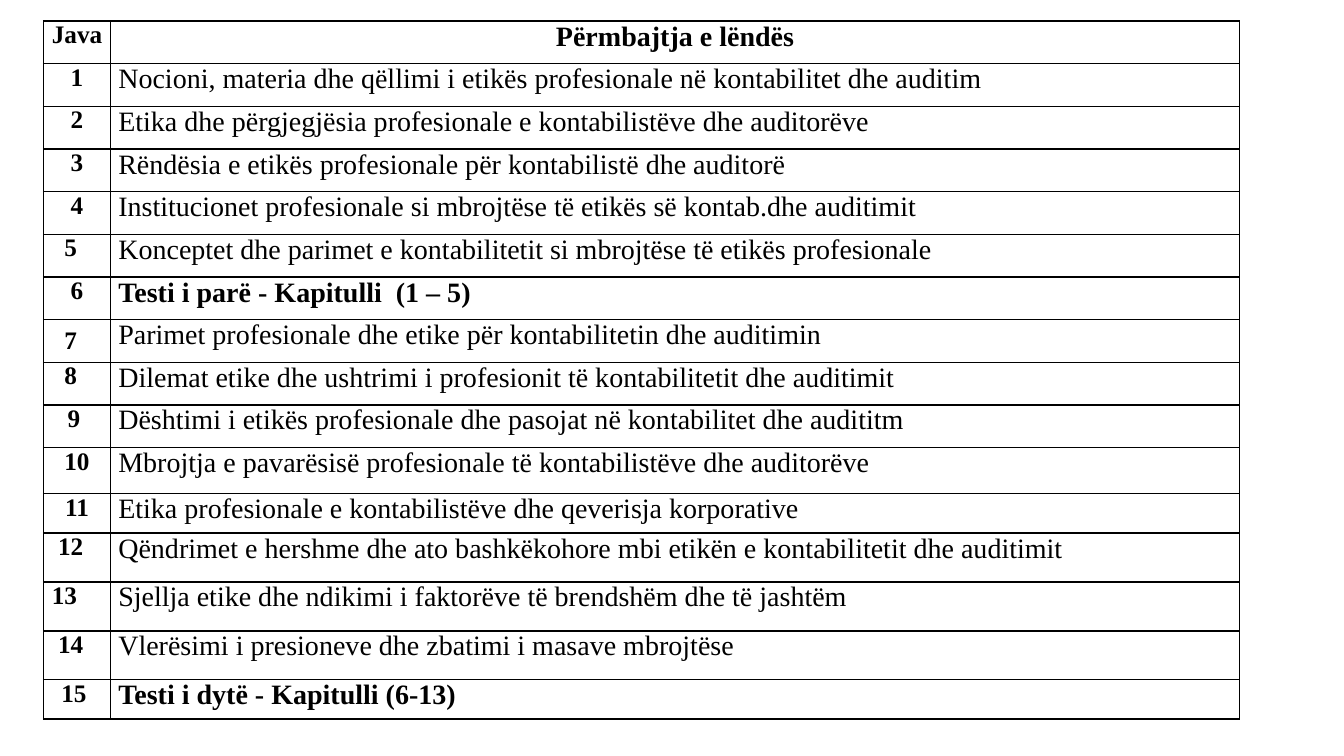
from pptx import Presentation
from pptx.dml.color import RGBColor
from pptx.enum.text import MSO_ANCHOR as Anchor, PP_ALIGN as Align
from pptx.oxml import parse_xml
from pptx.oxml.ns import nsdecls
from pptx.util import Pt

PX = 6350
FONT = "Times New Roman"
INK = "000000"
INSET = 11
SHIFT = 9
HEAD = ("Java", "Përmbajtja e lëndës")
TOPICS = [
    "Nocioni, materia dhe qëllimi i etikës profesionale në kontabilitet dhe auditim",
    "Etika dhe përgjegjësia profesionale e kontabilistëve dhe auditorëve",
    "Rëndësia e etikës profesionale për kontabilistë dhe auditorë",
    "Institucionet profesionale si mbrojtëse të etikës së kontab.dhe auditimit",
    "Konceptet dhe parimet e kontabilitetit si mbrojtëse të etikës profesionale",
    "Testi i parë - Kapitulli  (1 – 5)",
    "Parimet profesionale dhe etike për kontabilitetin dhe auditimin",
    "Dilemat etike dhe ushtrimi i profesionit të kontabilitetit dhe auditimit",
    "Dështimi i etikës profesionale dhe pasojat në kontabilitet dhe audititm",
    "Mbrojtja e pavarësisë profesionale të kontabilistëve dhe auditorëve",
    "Etika profesionale e kontabilistëve dhe qeverisja korporative",
    "Qëndrimet e hershme dhe ato bashkëkohore mbi etikën e kontabilitetit dhe auditimit",
    "Sjellja etike dhe ndikimi i faktorëve të brendshëm dhe të jashtëm",
    "Vlerësimi i presioneve dhe zbatimi i masave mbrojtëse",
    "Testi i dytë - Kapitulli (6-13)",
]
TESTS = {6, 15}
SHIFTS = {5: 2, 7: 2, 8: 2, 9: 1, 12: 2, 13: 4, 14: 2, 15: 1}
ROWS = [61] * 10 + [66, 56, 70, 70, 70, 56]


def px(n):
    return n * PX


def color(code):
    return RGBColor.from_string(code)


def border(cell):
    props = cell._tc.get_or_add_tcPr()
    for i, side in enumerate(("lnL", "lnR", "lnT", "lnB")):
        props.insert(i, parse_xml(
            f'<a:{side} {nsdecls("a")} w="{Pt(1)}"><a:solidFill>'
            f'<a:srgbClr val="{INK}"/></a:solidFill></a:{side}>'))


def write(cell, text, size, bold, align, shift=0):
    cell.fill.background()
    border(cell)
    cell.margin_left = px(INSET)
    cell.margin_right = px(INSET + shift * SHIFT)
    cell.margin_top = cell.margin_bottom = 0
    para = cell.text_frame.paragraphs[0]
    para.alignment = align
    run = para.add_run()
    run.text = text
    font = run.font
    font.name, font.size, font.bold = FONT, Pt(size), bold
    font.color.rgb = color(INK)


def syllabus(slide, left, top, width, week):
    frame = slide.shapes.add_table(
        len(ROWS), 2, px(left), px(top), px(width), px(sum(ROWS)))
    table = frame.table
    table.first_row = table.horz_banding = False
    table.columns[0].width = px(week)
    table.columns[1].width = px(width - week)
    for row, height in zip(table.rows, ROWS):
        row.height = px(height)
    write(table.cell(0, 0), HEAD[0], 18, True, Align.CENTER)
    write(table.cell(0, 1), HEAD[1], 20, True, Align.CENTER)
    for num, topic in enumerate(TOPICS, 1):
        write(table.cell(num, 0), str(num), 18, True, Align.CENTER,
              SHIFTS.get(num, 0))
        write(table.cell(num, 1), topic, 20, num in TESTS, Align.LEFT)
    table.cell(7, 0).vertical_anchor = Anchor.MIDDLE


def main():
    deck = Presentation()
    deck.slide_width, deck.slide_height = px(1920), px(1080)
    slide = deck.slides.add_slide(deck.slide_layouts[6])
    syllabus(slide, 62, 30, 1709, 96)
    deck.save("out.pptx")


if __name__ == "__main__":
    main()
